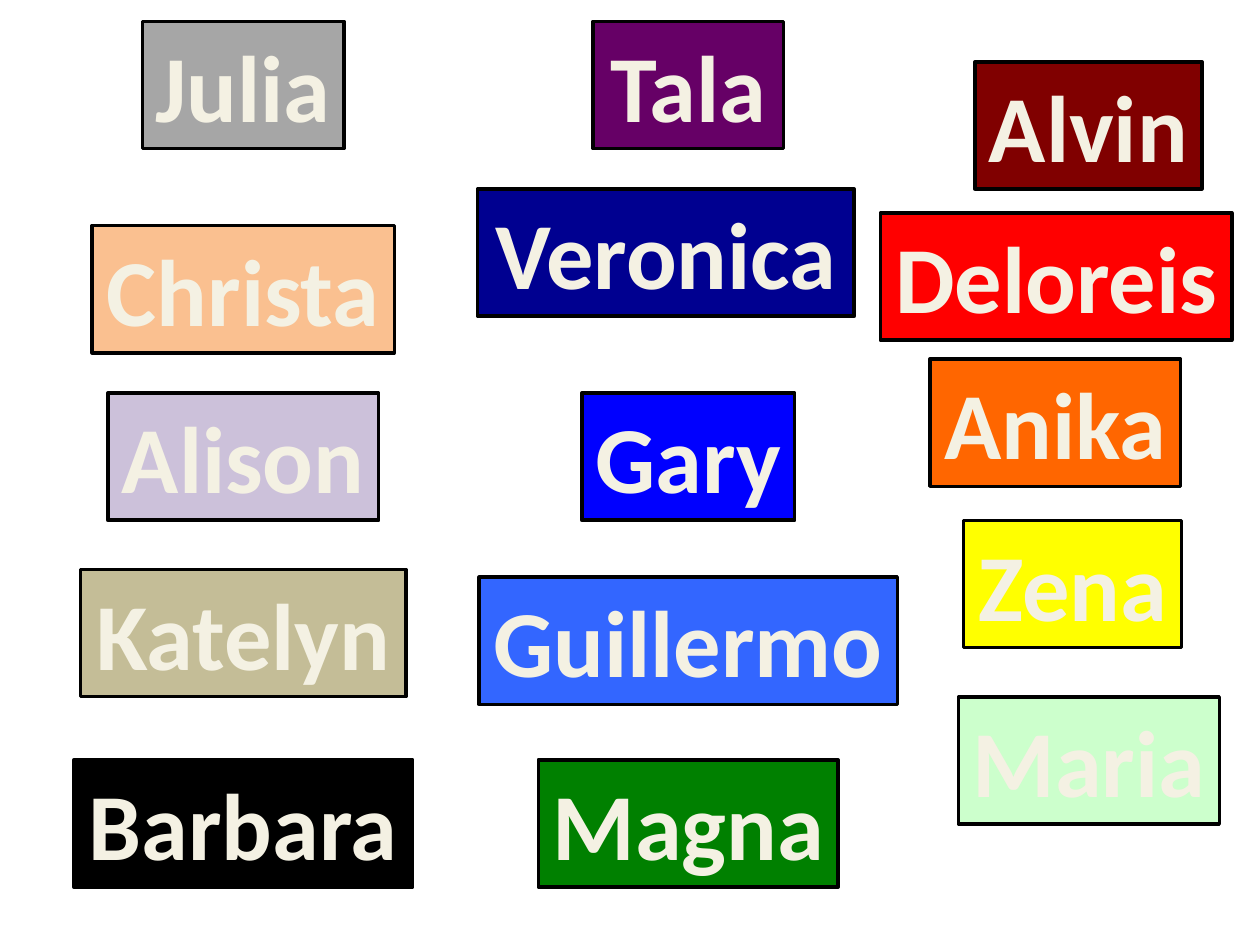
import pptx
import pptx.dml.color
import pptx.enum.text
import pptx.util
from lxml import etree

Pt = pptx.util.Pt
RGB = pptx.dml.color.RGBColor.from_string
DRAWING = "http://schemas.openxmlformats.org/drawingml/2006/main"

COLOURS = {
    "cream": "F4F1E3", "outline": "054697", "black": "000000",
    "grey": "A6A6A6", "peach": "FAC090", "lilac": "CCC1DA", "khaki": "C4BD97",
    "purple": "660066", "navy": "000090", "blue": "0000FF", "sky": "3366FF",
    "green": "008000", "maroon": "800000", "red": "FF0000",
    "orange": "FF6600", "yellow": "FFFF00", "mint": "CCFFCC",
}
TAG_HEIGHT = 72.7
FONT = {"name": "Calibri", "size": Pt(54), "bold": True}
FRAME = {
    "word_wrap": False,
    "auto_size": pptx.enum.text.MSO_AUTO_SIZE.SHAPE_TO_FIT_TEXT,
}

# Each tag: name, colour, top within the column, width, shift from its centre
LEFT_TAGS = [
    ("Julia", "grey", 0, 115.2, 0),
    ("Christa", "peach", 116.7, 172.8, 0),
    ("Alison", "lilac", 212.4, 154.8, 0),
    ("Katelyn", "khaki", 313.2, 185.8, 0),
    ("Barbara", "black", 422, 193.7, 0),
]
MIDDLE_TAGS = [
    ("Tala", "purple", 0, 108.7, 0),
    ("Veronica", "navy", 95.8, 215.3, -12.8),
    ("Gary", "blue", 212.4, 121.7, 0),
    ("Guillermo", "sky", 317.6, 239, 0),
    ("Magna", "green", 422, 171.4, 0),
]
RIGHT_TAGS = [
    ("Alvin", "maroon", 0, 129.6, 0),
    ("Deloreis", "red", 86.4, 200.9, -18.5),
    ("Anika", "orange", 169.9, 143.3, -19),
    ("Zena", "yellow", 262.1, 124.6, -9),
    ("Maria", "mint", 362.9, 149, 0.3),
]


def set_values(target, values):
    """Set each named attribute of the target."""
    for name, value in values.items():
        setattr(target, name, value)


def outline_text(span):
    """Give the letters of a run a thin coloured outline."""
    line = etree.Element(f"{{{DRAWING}}}ln", w=str(Pt(1)))
    fill = etree.SubElement(line, f"{{{DRAWING}}}solidFill")
    etree.SubElement(fill, f"{{{DRAWING}}}srgbClr", val=COLOURS["outline"])
    span.font._element.insert(0, line)


def add_name_tag(slide, name, colour, left, top, width):
    """Add one framed name on a coloured ground."""
    box = slide.shapes.add_textbox(Pt(left), Pt(top), Pt(width), Pt(TAG_HEIGHT))
    box.fill.solid()
    box.fill.fore_color.rgb = RGB(COLOURS[colour])
    box.line.color.rgb = RGB(COLOURS["black"])
    box.line.width = Pt(2)
    set_values(box.text_frame, FRAME)
    para = box.text_frame.paragraphs[0]
    para.alignment = pptx.enum.text.PP_ALIGN.CENTER
    span = para.add_run()
    span.text = name
    set_values(span.font, FONT)
    span.font.color.rgb = RGB(COLOURS["cream"])
    outline_text(span)


def add_column(slide, centre, top, tags):
    """Add a column of name tags around a centre line."""
    for name, colour, offset, width, shift in tags:
        left = centre + shift - width / 2
        add_name_tag(slide, name, colour, left, top + offset, width)


def main():
    """Build and save the slide of names."""
    deck = pptx.Presentation()
    set_values(deck, {"slide_width": Pt(720), "slide_height": Pt(540)})
    slide = deck.slides.add_slide(deck.slide_layouts[6])
    add_column(slide, 622, 35.3, RIGHT_TAGS)
    add_column(slide, 393.3, 12.2, MIDDLE_TAGS)
    add_column(slide, 139, 12.2, LEFT_TAGS)
    deck.save("out.pptx")


if __name__ == "__main__":
    main()
